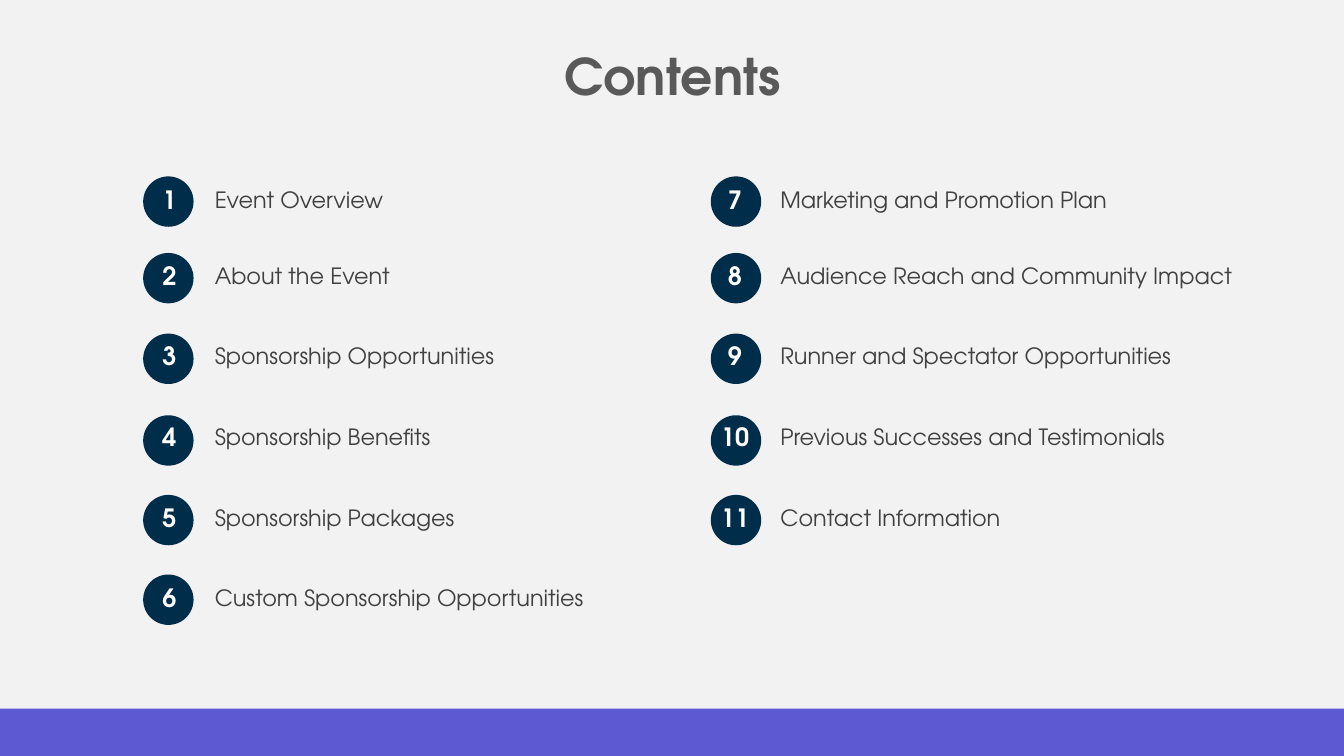
from dataclasses import dataclass

from lxml import etree
from pptx import Presentation
from pptx.dml.color import RGBColor
from pptx.enum.shapes import MSO_SHAPE
from pptx.enum.text import MSO_ANCHOR, MSO_AUTO_SIZE, PP_ALIGN
from pptx.oxml.ns import qn
from pptx.util import Emu, Pt

ELLIPSE = MSO_SHAPE.OVAL
RECTANGLE = MSO_SHAPE.RECTANGLE
MIDDLE = MSO_ANCHOR.MIDDLE
GROW = MSO_AUTO_SIZE.SHAPE_TO_FIT_TEXT
CENTER = PP_ALIGN.CENTER
LEFT = PP_ALIGN.LEFT

EMU_PER_PX = 9144
FONT = "TeX Gyre Adventor"
COLORS = {
    "background": "F2F2F2",
    "badge": "002D4A",
    "title": "595959",
    "number": "FFFFFF",
    "topic": "404040",
    "footer": "5C59D3",
}
PLAIN_TABLE_STYLE = "{2D5ABB26-0587-4C30-8999-92F81FD0307C}"
BADGE_SIZE = 50
BADGE_TOPS = (175, 251, 331, 412, 491, 570)
TABLE_TOP = 165
COLUMN_WIDTHS = (50, 494)
FIRST_ROW_HEIGHT = 71
ROW_HEIGHT = 80


@dataclass(frozen=True)
class TopicColumn:
    badge_left: int
    table_left: int
    first_number: int
    topics: tuple[str, ...]


TOPIC_COLUMNS = (
    TopicColumn(705, 704, 7, (
        "Marketing and Promotion Plan",
        "Audience Reach and Community Impact",
        "Runner and Spectator Opportunities",
        "Previous Successes and Testimonials",
        "Contact Information",
    )),
    TopicColumn(142, 143, 1, (
        "Event Overview",
        "About the Event",
        "Sponsorship Opportunities",
        "Sponsorship Benefits",
        "Sponsorship Packages",
        "Custom Sponsorship Opportunities",
    )),
)


def px(length: int) -> Emu:
    return Emu(length * EMU_PER_PX)


def color(name: str) -> RGBColor:
    return RGBColor.from_string(COLORS[name])


def add_filled_shape(slide, kind, left: int, top: int, width: int, height: int, fill: str) -> None:
    shape = slide.shapes.add_shape(kind, px(left), px(top), px(width), px(height))
    shape.shadow.inherit = False
    shape.fill.solid()
    shape.fill.fore_color.rgb = color(fill)
    shape.line.fill.background()


def write_text(frame, text: str, size: int, color_name: str, bold: bool, alignment) -> None:
    paragraph = frame.paragraphs[0]
    paragraph.text = text
    paragraph.alignment = alignment
    paragraph.font.name = FONT
    paragraph.font.size = Pt(size)
    paragraph.font.bold = bold
    paragraph.font.color.rgb = color(color_name)


def add_title(slide) -> None:
    title = slide.shapes.add_textbox(px(202), px(40), px(930), px(71))
    title.text_frame.word_wrap = True
    title.text_frame.auto_size = GROW
    write_text(title.text_frame, "Contents", 36, "title", True, CENTER)


def add_border(cell, side: str) -> None:
    line = etree.Element(qn(f"a:{side}"), w=str(Pt(0.75)))
    fill = etree.SubElement(line, qn("a:solidFill"))
    etree.SubElement(fill, qn("a:srgbClr"), val=COLORS["background"])
    cell._tc.get_or_add_tcPr().insert(0, line)


def add_topic_column(slide, column: TopicColumn) -> None:
    row_count = len(column.topics)
    for top in BADGE_TOPS[:row_count]:
        add_filled_shape(slide, ELLIPSE, column.badge_left, top, BADGE_SIZE, BADGE_SIZE, "badge")

    height = FIRST_ROW_HEIGHT + (row_count - 1) * ROW_HEIGHT
    table = slide.shapes.add_table(
        row_count, 2, px(column.table_left), px(TABLE_TOP), px(sum(COLUMN_WIDTHS)), px(height)
    ).table
    table.first_row = False
    table.horz_banding = False
    table._tbl.tblPr.find(qn("a:tableStyleId")).text = PLAIN_TABLE_STYLE
    for table_column, width in zip(table.columns, COLUMN_WIDTHS):
        table_column.width = px(width)

    for index, topic in enumerate(column.topics):
        table.rows[index].height = px(ROW_HEIGHT if index else FIRST_ROW_HEIGHT)
        number_cell, topic_cell = table.rows[index].cells
        for cell in (number_cell, topic_cell):
            cell.vertical_anchor = MIDDLE
            cell.fill.background()
        add_border(number_cell, "lnB")
        if index:
            add_border(number_cell, "lnT")
        topic_cell.margin_left = px(20)
        number = str(column.first_number + index)
        write_text(number_cell.text_frame, number, 18, "number", True, CENTER)
        write_text(topic_cell.text_frame, topic, 16, "topic", False, LEFT)


def main() -> None:
    presentation = Presentation()
    presentation.slide_width = px(1333)
    presentation.slide_height = px(750)
    slide = presentation.slides.add_slide(presentation.slide_layouts[6])
    slide.background.fill.solid()
    slide.background.fill.fore_color.rgb = color("background")

    add_title(slide)
    for column in TOPIC_COLUMNS:
        add_topic_column(slide, column)
    add_filled_shape(slide, RECTANGLE, 0, 703, 1333, 47, "footer")
    presentation.save("out.pptx")


if __name__ == "__main__":
    main()
